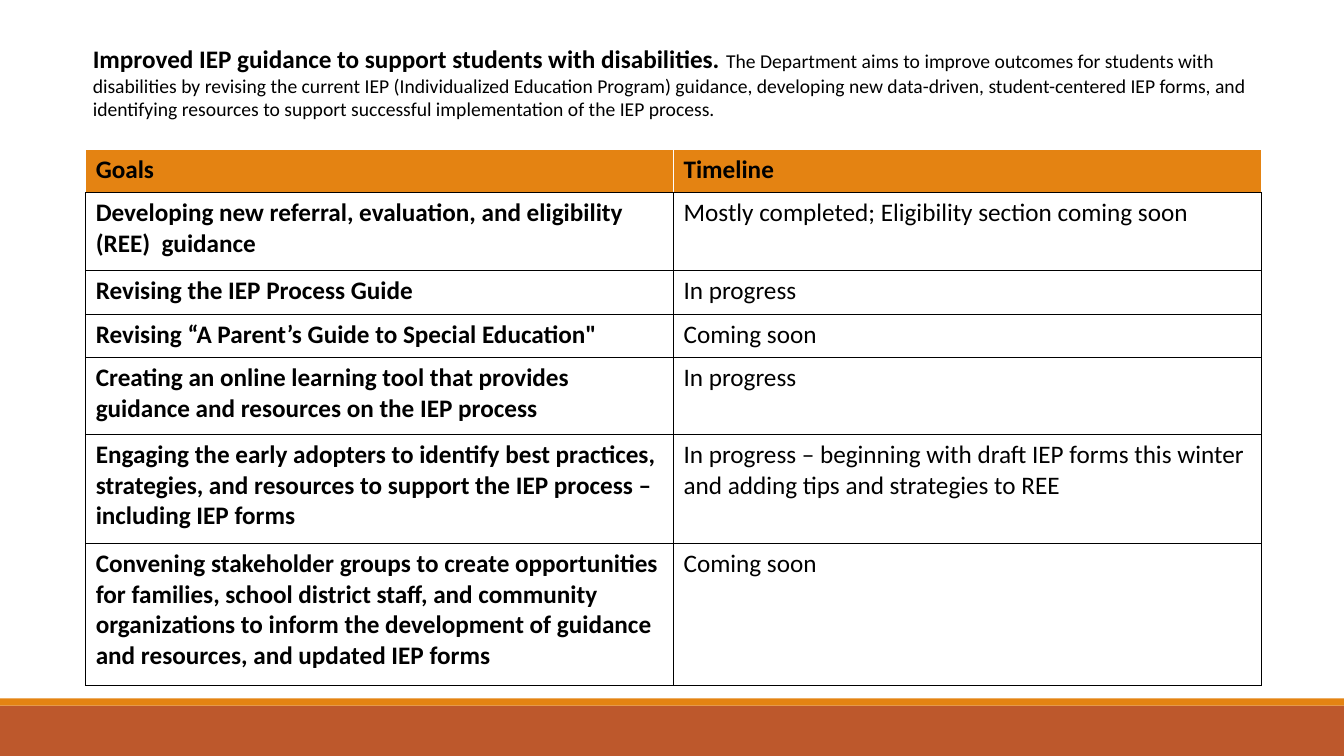
from lxml.etree import SubElement
from pptx import Presentation
from pptx.dml.color import RGBColor
from pptx.enum.shapes import MSO_SHAPE
from pptx.enum.text import MSO_ANCHOR, PP_ALIGN
from pptx.oxml.ns import qn
from pptx.util import Inches, Pt

ORANGE, RUST, BLACK, WHITE = "E48312", "BD582C", "000000", "FFFFFF"

LEAD = "Improved IEP guidance to support students with disabilities. "
AIM = (
    "The Department aims to improve outcomes for students with disabilities by "
    "revising the current IEP (Individualized Education Program) guidance, "
    "developing new data-driven, student-centered IEP forms, and identifying "
    "resources to support successful implementation of the IEP process."
)
ROWS = [
    ("Goals", "Timeline"),
    ("Developing new referral, evaluation, and eligibility (REE)  guidance",
     "Mostly completed; Eligibility section coming soon"),
    ("Revising the IEP Process Guide", "In progress"),
    ("Revising “A Parent’s Guide to Special Education\"", "Coming soon"),
    ("Creating an online learning tool that provides guidance and resources "
     "on the IEP process", "In progress"),
    ("Engaging the early adopters to identify best practices, strategies, and "
     "resources to support the IEP process – including IEP forms",
     "In progress – beginning with draft IEP forms this winter and adding tips "
     "and strategies to REE"),
    ("Convening stakeholder groups to create opportunities for families, school "
     "district staff, and community organizations to inform the development of "
     "guidance and resources, and updated IEP forms", "Coming soon"),
]
HEIGHTS = [0.43, 0.77, 0.44, 0.43, 0.76, 1.08, 1.41]


def color(code):
    return RGBColor.from_string(code)


class Deck:
    font = "Calibri"
    size = 18

    def __init__(self):
        self.prs = Presentation()
        self.prs.slide_width = Inches(13.33)
        self.prs.slide_height = Inches(7.5)
        self.slide = self.prs.slides.add_slide(self.prs.slide_layouts[5])

    def style(self, run, size, bold):
        run.font.name = self.font
        run.font.size = Pt(size)
        run.font.bold = bold
        run.font.color.rgb = color(BLACK)

    def band(self, top, height, fill):
        bar = self.slide.shapes.add_shape(
            MSO_SHAPE.RECTANGLE, 0, Inches(top), self.prs.slide_width, Inches(height))
        bar.shadow.inherit = False
        bar.fill.solid()
        bar.fill.fore_color.rgb = color(fill)
        bar.line.fill.background()

    def title(self, left, top, width, height, parts):
        box = self.slide.shapes.title
        box.left, box.top = Inches(left), Inches(top)
        box.width, box.height = Inches(width), Inches(height)
        frame = box.text_frame
        frame.word_wrap = True
        frame.vertical_anchor = MSO_ANCHOR.TOP
        para = frame.paragraphs[0]
        para.alignment = PP_ALIGN.LEFT
        for text, size, bold in parts:
            run = para.add_run()
            run.text = text
            self.style(run, size, bold)

    def edges(self, cell, head):
        props = cell._tc.get_or_add_tcPr()
        for spot, side in enumerate(("lnL", "lnR", "lnT", "lnB")):
            line = SubElement(props, qn("a:" + side), w=str(Pt(1)))
            fill = SubElement(line, qn("a:solidFill"))
            shade = WHITE if head and side != "lnB" else BLACK
            SubElement(fill, qn("a:srgbClr"), val=shade)
            props.insert(spot, line)

    def table(self, left, top, width, rows, heights):
        count = len(rows[0])
        grid = self.slide.shapes.add_table(
            len(rows), count, Inches(left), Inches(top),
            Inches(width), Inches(sum(heights))).table
        for col in grid.columns:
            col.width = Inches(width / count)
        for r, (texts, height) in enumerate(zip(rows, heights)):
            grid.rows[r].height = Inches(height)
            for c, text in enumerate(texts):
                cell = grid.cell(r, c)
                cell.text_frame.text = text
                self.style(cell.text_frame.paragraphs[0].runs[0],
                           self.size, r == 0 or c == 0)
                cell.fill.solid()
                cell.fill.fore_color.rgb = color(WHITE if r else ORANGE)
                self.edges(cell, r == 0)


def main():
    deck = Deck()
    deck.band(7, 0.5, RUST)
    deck.band(6.93, 0.07, ORANGE)
    deck.title(0.82, 0.38, 11.7, 0.88, [(LEAD, 18, True), (AIM, 14, False)])
    deck.table(0.85, 1.48, 11.66, ROWS, HEIGHTS)
    deck.prs.save("out.pptx")


if __name__ == "__main__":
    main()
